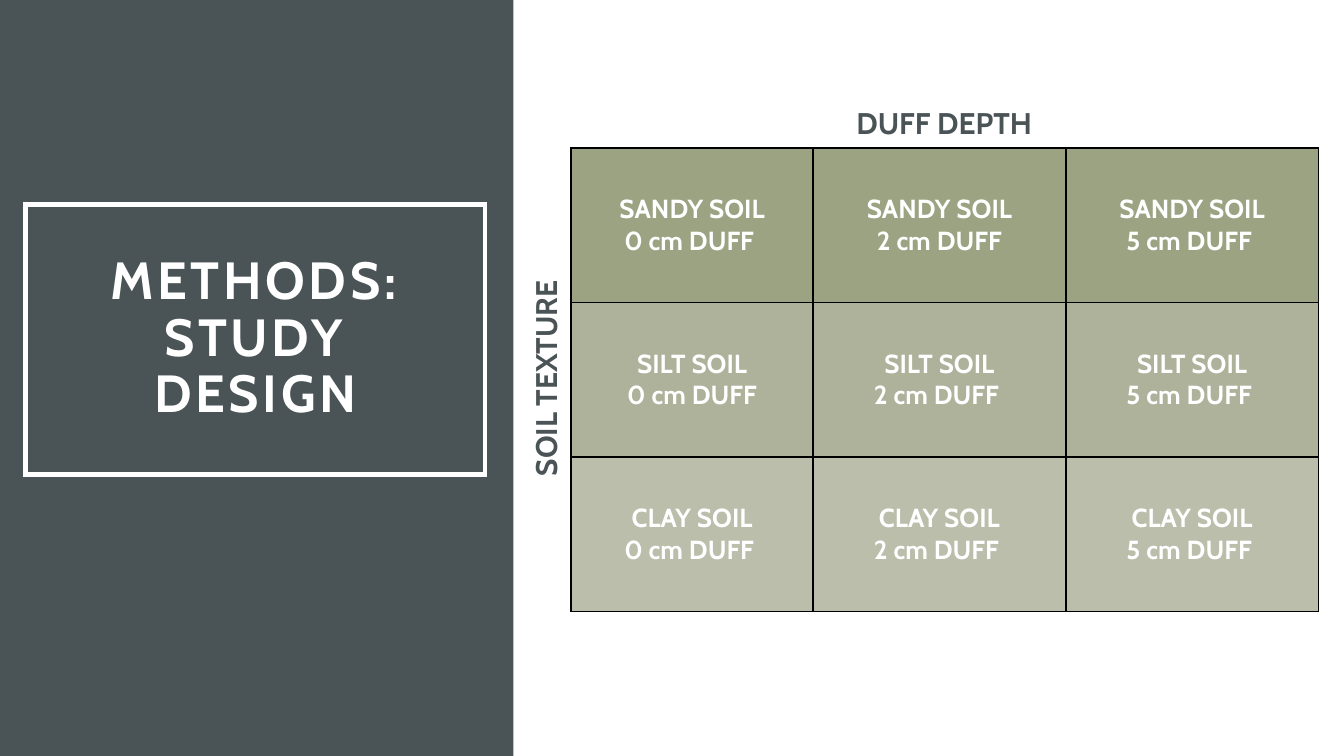
"""Build the study design slide: a title panel beside a soil and duff table."""
from lxml import etree
from pptx import Presentation
from pptx.dml.color import RGBColor
from pptx.enum.shapes import MSO_SHAPE
from pptx.enum.text import MSO_ANCHOR, PP_ALIGN
from pptx.oxml.ns import qn
from pptx.util import Inches, Pt

RECTANGLE = MSO_SHAPE.RECTANGLE
MIDDLE = MSO_ANCHOR.MIDDLE
CENTER = PP_ALIGN.CENTER

SLIDE_WIDTH = 10
SLIDE_HEIGHT = SLIDE_WIDTH * 9 / 16
FONT = "Cabin"
COLORS = {
    "slate": "4A5356",
    "white": "FFFFFF",
    "border": "000000",
    "sandy": "9CA383",
    "silt": "AEB29B",
    "clay": "BABEAB",
}
TREATMENTS = {
    "sandy": ["0 cm DUFF ", "2 cm DUFF", "5 cm DUFF "],
    "silt": ["0 cm DUFF", "2 cm DUFF ", "5 cm DUFF "],
    "clay": ["0 cm DUFF ", "2 cm DUFF ", "5 cm DUFF "],
}
COLUMN_WIDTHS = [1.8, 1.88, 1.88]
ROW_HEIGHT = 1.15


def rgb(name):
    return RGBColor.from_string(COLORS[name])


def style_paragraph(paragraph, size, color):
    paragraph.alignment = CENTER
    paragraph.font.name = FONT
    paragraph.font.size = Pt(size)
    paragraph.font.bold = True
    paragraph.font.color.rgb = rgb(color)


def add_rectangle(slide, left, top, width, height):
    rectangle = slide.shapes.add_shape(
        RECTANGLE, Inches(left), Inches(top), Inches(width), Inches(height))
    rectangle.shadow.inherit = False
    return rectangle


def add_panel(slide):
    panel = add_rectangle(slide, 0, 0, 3.82, SLIDE_HEIGHT)
    panel.fill.solid()
    panel.fill.fore_color.rgb = rgb("slate")
    panel.line.fill.background()


def add_title(slide, text):
    title = add_rectangle(slide, 0.19, 1.52, 3.42, 2.01)
    title.fill.background()
    title.line.color.rgb = rgb("white")
    title.line.width = Pt(2.5)
    outline = title._element.spPr.find(qn("a:ln"))
    etree.SubElement(outline, qn("a:miter"), lim="800000")
    frame = title.text_frame
    frame.word_wrap = True
    frame.vertical_anchor = MIDDLE
    frame.margin_left = frame.margin_right = Inches(0.3)
    frame.margin_top = frame.margin_bottom = Inches(0.2)
    paragraph = frame.paragraphs[0]
    run = paragraph.add_run()
    run.text = text
    run.font._element.set("spc", "200")
    paragraph.line_spacing = 0.9
    style_paragraph(paragraph, 28, "white")


def add_axis_label(slide, text, left, top, width, rotation=0):
    label = slide.shapes.add_textbox(
        Inches(left), Inches(top), Inches(width), Inches(0.37))
    label.rotation = rotation
    label.text_frame.word_wrap = True
    label.text_frame.text = text
    style_paragraph(label.text_frame.paragraphs[0], 16, "slate")


def add_borders(cell):
    properties = cell._tc.get_or_add_tcPr()
    for side in ("lnL", "lnR", "lnT", "lnB"):
        border = etree.SubElement(properties, qn(f"a:{side}"), w=str(Pt(1)))
        fill = etree.SubElement(border, qn("a:solidFill"))
        etree.SubElement(fill, qn("a:srgbClr"), val=COLORS["border"])


def fill_cell(cell, soil, duff):
    add_borders(cell)
    cell.fill.solid()
    cell.fill.fore_color.rgb = rgb(soil)
    cell.vertical_anchor = MIDDLE
    cell.margin_left = cell.margin_right = Inches(0.11)
    cell.margin_top = cell.margin_bottom = Inches(0.05)
    cell.text = f"{soil.upper()} SOIL\n{duff}"
    for paragraph in cell.text_frame.paragraphs:
        style_paragraph(paragraph, 14, "white")


def add_treatment_table(slide):
    row_count = len(TREATMENTS)
    table = slide.shapes.add_table(
        row_count, len(COLUMN_WIDTHS), Inches(4.25), Inches(1.1),
        Inches(sum(COLUMN_WIDTHS)), Inches(ROW_HEIGHT * row_count)).table
    table.first_row = False
    table.horz_banding = False
    for column, width in zip(table.columns, COLUMN_WIDTHS):
        column.width = Inches(width)
    for row, (soil, duffs) in zip(table.rows, TREATMENTS.items()):
        row.height = Inches(ROW_HEIGHT)
        for cell, duff in zip(row.cells, duffs):
            fill_cell(cell, soil, duff)


def main():
    presentation = Presentation()
    presentation.slide_width = Inches(SLIDE_WIDTH)
    presentation.slide_height = Inches(SLIDE_HEIGHT)
    slide = presentation.slides.add_slide(presentation.slide_layouts[6])
    add_panel(slide)
    add_title(slide, "METHODS: STUDY DESIGN")
    add_treatment_table(slide)
    add_axis_label(slide, "SOIL TEXTURE", 2.76, 2.63, 2.6, rotation=270)
    add_axis_label(slide, "DUFF DEPTH", 6, 0.73, 2.05)
    presentation.save("out.pptx")


if __name__ == "__main__":
    main()
